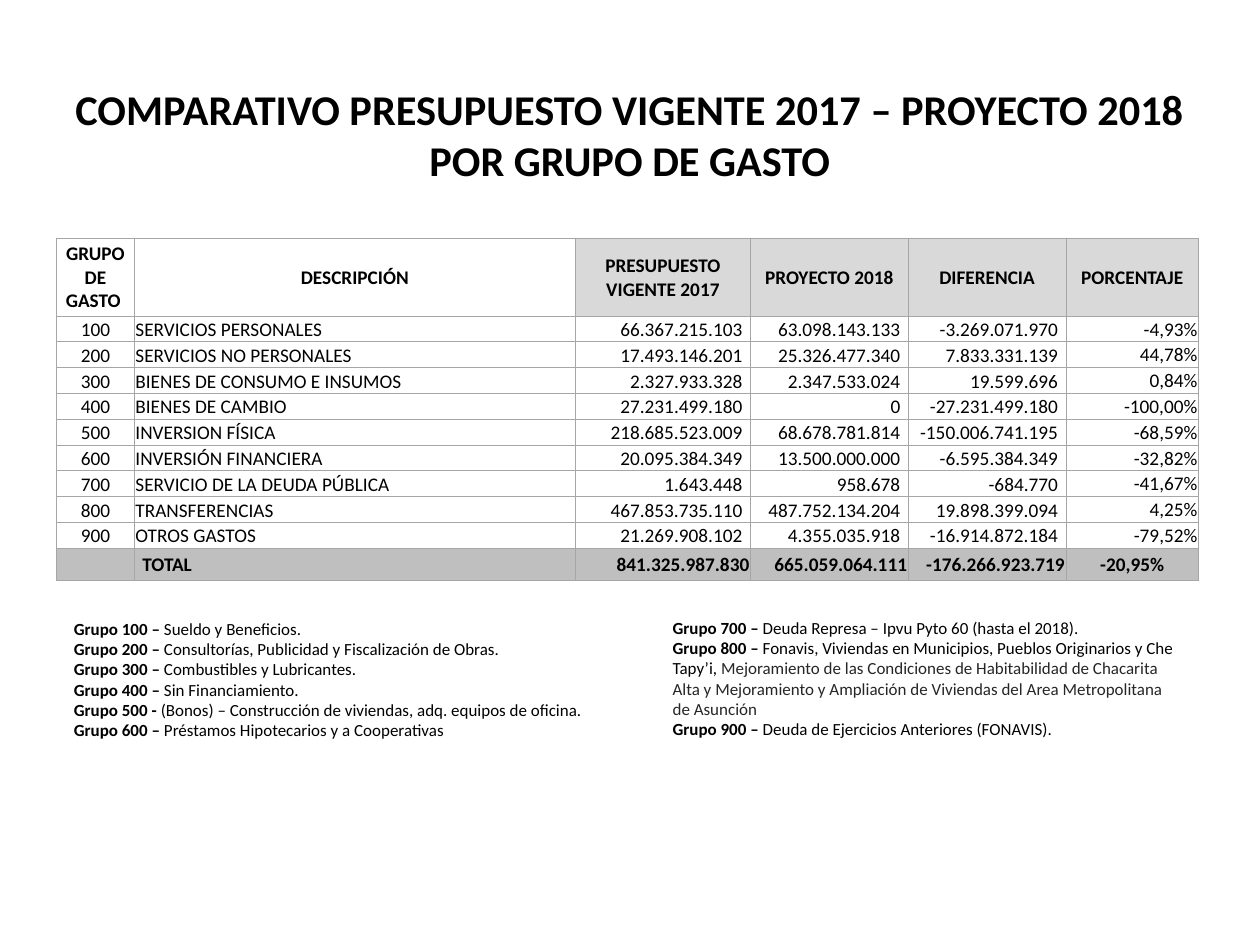
from dataclasses import dataclass

from lxml import etree
from pptx import Presentation
from pptx.dml.color import RGBColor
from pptx.enum.text import MSO_ANCHOR, PP_ALIGN
from pptx.oxml.ns import qn
from pptx.util import Cm, Pt

LEFT, CENTER, RIGHT = PP_ALIGN.LEFT, PP_ALIGN.CENTER, PP_ALIGN.RIGHT
MIDDLE, BOTTOM = MSO_ANCHOR.MIDDLE, MSO_ANCHOR.BOTTOM


@dataclass(frozen=True)
class Theme:
    font: str = "Calibri"
    title_size: float = 24.2
    table_size: float = 11
    note_size: float = 9.7
    ink: str = "000000"
    soft_ink: str = "262626"
    header_fill: str = "D9D9D9"
    total_fill: str = "BFBFBF"
    border: str = "A6A6A6"


THEME = Theme()
NARROW, WIDE = Cm(0.02), Cm(0.16)
BORDER_WIDTH = Pt(0.5)

COLUMN_WIDTHS = [1.57, 8.89, 3.53, 3.18, 3.18, 2.67]
HEADER_HEIGHT, GROUP_HEIGHT, TOTAL_HEIGHT = 1.57, 0.52, 0.65

HEADERS = ["GRUPO DE GASTO ", "DESCRIPCIÓN", "PRESUPUESTO VIGENTE 2017",
           "PROYECTO 2018", "DIFERENCIA", "PORCENTAJE"]
GROUPS = [
    ["100", "SERVICIOS PERSONALES", "66.367.215.103", "63.098.143.133", "-3.269.071.970", "-4,93%"],
    ["200", "SERVICIOS NO PERSONALES", "17.493.146.201", "25.326.477.340", "7.833.331.139", "44,78%"],
    ["300", "BIENES DE CONSUMO E INSUMOS", "2.327.933.328", "2.347.533.024", "19.599.696", "0,84%"],
    ["400", "BIENES DE CAMBIO", "27.231.499.180", "0", "-27.231.499.180", "-100,00%"],
    ["500", "INVERSION FÍSICA", "218.685.523.009", "68.678.781.814", "-150.006.741.195", "-68,59%"],
    ["600", "INVERSIÓN FINANCIERA", "20.095.384.349", "13.500.000.000", "-6.595.384.349", "-32,82%"],
    ["700", "SERVICIO DE LA DEUDA PÚBLICA", "1.643.448", "958.678", "-684.770", "-41,67%"],
    ["800", "TRANSFERENCIAS", "467.853.735.110", "487.752.134.204", "19.898.399.094", "4,25%"],
    ["900", "OTROS GASTOS", "21.269.908.102", "4.355.035.918", "-16.914.872.184", "-79,52%"],
]
TOTALS = ["", "TOTAL", "841.325.987.830", "665.059.064.111", "-176.266.923.719", "-20,95%"]

TITLE = ["COMPARATIVO PRESUPUESTO VIGENTE 2017 – PROYECTO 2018", "POR GRUPO DE GASTO"]
# Each note is a bold label, its text and, where needed, a softer continuation.
LEFT_NOTES = [
    ("Grupo 100 – ", "Sueldo y Beneficios."),
    ("Grupo 200 – ", "Consultorías, Publicidad y Fiscalización de Obras."),
    ("Grupo 300 – ", "Combustibles y Lubricantes."),
    ("Grupo 400 – ", "Sin Financiamiento."),
    ("Grupo 500 - ", "(Bonos) – Construcción de viviendas, adq. equipos de oficina."),
    ("Grupo 600 – ", "Préstamos Hipotecarios y a Cooperativas"),
]
RIGHT_NOTES = [
    ("Grupo 700 – ", "Deuda Represa – Ipvu Pyto 60 (hasta el 2018)."),
    ("Grupo 800 – ",
     "Fonavis, Viviendas en Municipios, Pueblos Originarios y Che Tapy’i, ",
     "Mejoramiento de las Condiciones de Habitabilidad de Chacarita Alta y "
     "Mejoramiento y Ampliación de Viviendas del Area Metropolitana de Asunción"),
    ("Grupo 900 – ", "Deuda de Ejercicios Anteriores (FONAVIS)."),
]


def style_font(font, size, bold, color=THEME.ink):
    font.name = THEME.font
    font.size = Pt(size)
    font.bold = bold
    font.color.rgb = RGBColor.from_string(color)


def add_run(paragraph, text, size, bold=False, color=THEME.ink):
    run = paragraph.add_run()
    run.text = text
    style_font(run.font, size, bold, color)


def add_text(slide, left, top, width, height, lines, size, align=LEFT):
    """Add a text box; each line is a list of (text, bold, color) runs."""
    frame = slide.shapes.add_textbox(Cm(left), Cm(top), Cm(width), Cm(height)).text_frame
    frame.word_wrap = True
    for index, line in enumerate(lines):
        paragraph = frame.paragraphs[0] if index == 0 else frame.add_paragraph()
        paragraph.alignment = align
        for text, bold, color in line:
            add_run(paragraph, text, size, bold, color)


def note_lines(notes):
    run_styles = [(True, THEME.ink), (False, THEME.ink), (False, THEME.soft_ink)]
    return [[(text, *style) for text, style in zip(note, run_styles)] for note in notes]


def add_borders(cell):
    properties = cell._tc.get_or_add_tcPr()
    for side in ("a:lnL", "a:lnR", "a:lnT", "a:lnB"):
        line = etree.SubElement(properties, qn(side), w=str(BORDER_WIDTH))
        fill = etree.SubElement(line, qn("a:solidFill"))
        etree.SubElement(fill, qn("a:srgbClr"), val=THEME.border)


def fill_cell(cell, text, align, anchor=MIDDLE, bold=False, color=None,
              left=NARROW, right=NARROW):
    cell.margin_left, cell.margin_right = left, right
    cell.margin_top, cell.margin_bottom = NARROW, 0
    cell.vertical_anchor = anchor
    add_borders(cell)
    if color:
        cell.fill.solid()
        cell.fill.fore_color.rgb = RGBColor.from_string(color)
    else:
        cell.fill.background()
    paragraph = cell.text_frame.paragraphs[0]
    paragraph.alignment = align
    if text:
        add_run(paragraph, text, THEME.table_size, bold)
    else:
        style_font(paragraph.font, THEME.table_size, bold)


def add_budget_table(slide):
    heights = [HEADER_HEIGHT] + [GROUP_HEIGHT] * len(GROUPS) + [TOTAL_HEIGHT]
    table = slide.shapes.add_table(
        len(heights), len(COLUMN_WIDTHS), Cm(1.14), Cm(4.8),
        Cm(sum(COLUMN_WIDTHS)), Cm(sum(heights))).table
    table.first_row = table.horz_banding = False
    for column, width in zip(table.columns, COLUMN_WIDTHS):
        column.width = Cm(width)
    for row, height in zip(table.rows, heights):
        row.height = Cm(height)

    for column, text in enumerate(HEADERS):
        fill_cell(table.cell(0, column), text, CENTER, bold=True,
                  color=THEME.header_fill if column >= 2 else None)

    group_aligns = [CENTER, LEFT, RIGHT, RIGHT, RIGHT, RIGHT]
    percent_column = len(HEADERS) - 1
    for row, group in enumerate(GROUPS, start=1):
        for column, (text, align) in enumerate(zip(group, group_aligns)):
            is_amount = 2 <= column < percent_column
            fill_cell(table.cell(row, column), text, align,
                      anchor=MIDDLE if column == percent_column else BOTTOM,
                      right=WIDE if is_amount else NARROW)

    total_aligns = [LEFT, LEFT, RIGHT, RIGHT, RIGHT, CENTER]
    for column, (text, align) in enumerate(zip(TOTALS, total_aligns)):
        fill_cell(table.cell(len(heights) - 1, column), text, align, bold=True,
                  color=THEME.total_fill, left=WIDE if column == 1 else NARROW)


def main():
    presentation = Presentation()
    presentation.slide_width, presentation.slide_height = Cm(25.4), Cm(19.05)
    slide = presentation.slides.add_slide(presentation.slide_layouts[6])
    add_budget_table(slide)
    add_text(slide, 1.24, 12.34, 11.02, 2.74, note_lines(LEFT_NOTES), THEME.note_size)
    add_text(slide, 13.31, 12.32, 10.77, 2.74, note_lines(RIGHT_NOTES), THEME.note_size)
    title_lines = [[(text, True, THEME.ink)] for text in TITLE]
    add_text(slide, 0, 1.55, 25.4, 2.31, title_lines, THEME.title_size, CENTER)
    presentation.save("out.pptx")


if __name__ == "__main__":
    main()
